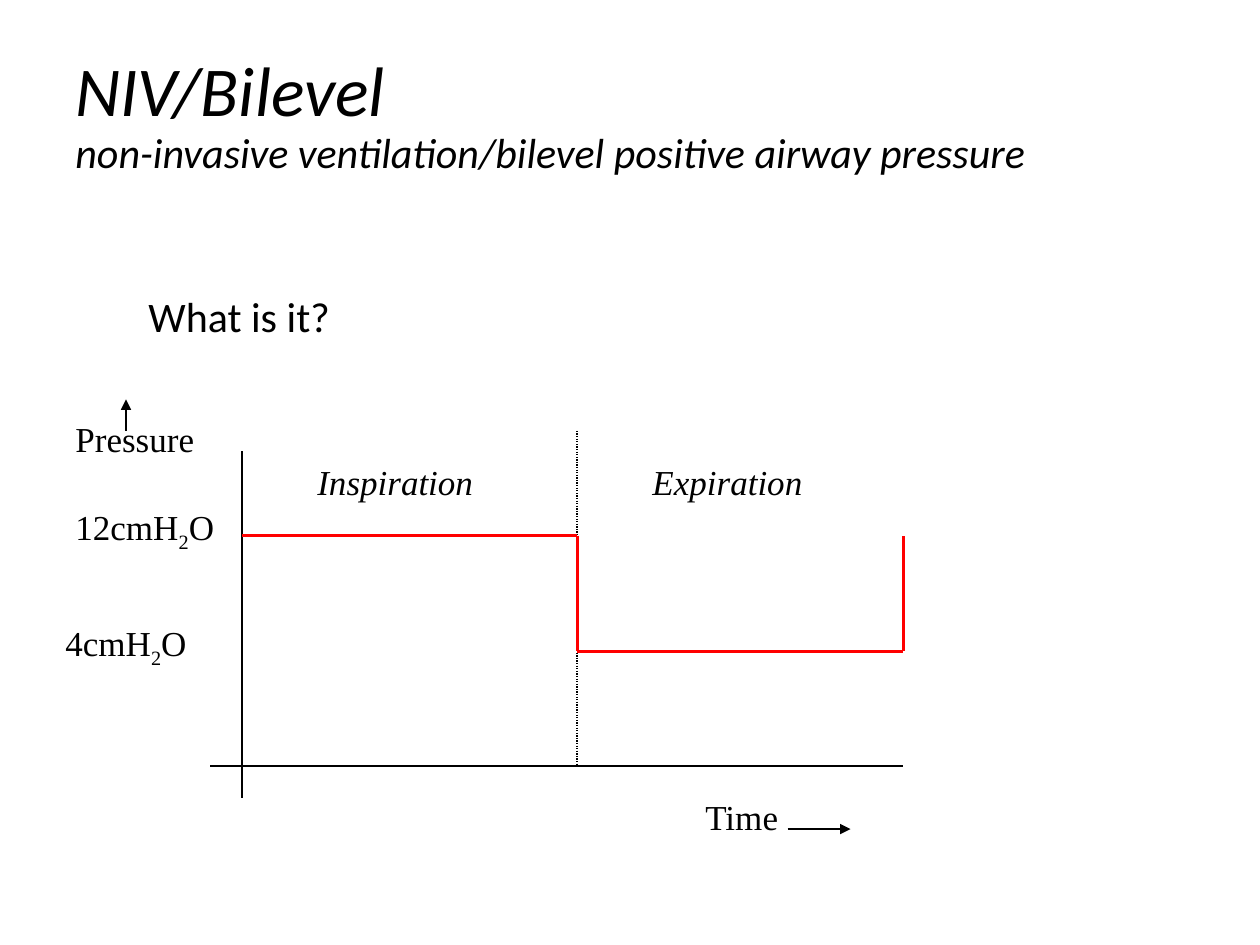
from lxml import etree
from pptx import Presentation
from pptx.dml.color import RGBColor
from pptx.enum import dml, shapes, text
from pptx.oxml import ns
from pptx.util import Inches, Pt

BLACK = RGBColor(0, 0, 0)
RED = RGBColor(255, 0, 0)
SANS, SERIF = "Calibri", "Times New Roman"

TITLE = "NIV/Bilevel"
SUBTITLE = "non-invasive ventilation/bilevel positive airway pressure"
QUESTION = "What is it?"

AXIS_X, SWITCH_X, END_X = 1.92, 4.58, 7.17
HIGH_Y, LOW_Y, BASE_Y = 4.25, 5.17, 6.08

LABELS = [
    (["Pressure"], 0.5, 3.33, 1.25, False),
    (["12cmH", "2", "O"], 0.5, 4, 1.33, False),
    (["4cmH", "2", "O"], 0.42, 4.92, 1.33, False),
    (["Inspiration"], 2.42, 3.67, 1.58, True),
    (["Expiration"], 5.08, 3.67, 1.58, True),
    (["Time"], 5.5, 6.33, 1.17, False),
]
AXES = [
    ((AXIS_X, 3.58), (AXIS_X, 6.33)),
    ((1.67, BASE_Y), (END_X, BASE_Y)),
]
ARROWS = [
    ((1, 3.42), (1, 3.17)),
    ((6.25, 6.58), (6.75, 6.58)),
]
PRESSURE_CURVE = [
    (AXIS_X, HIGH_Y), (SWITCH_X, HIGH_Y), (SWITCH_X, LOW_Y),
    (END_X, LOW_Y), (END_X, HIGH_Y),
]


def add_text(slide, pieces, left, top, width, height, size, font,
             italic=False, spacing=0.8):
    box = slide.shapes.add_textbox(*map(Inches, (left, top, width, height)))
    frame = box.text_frame
    frame.word_wrap = True
    paragraph = frame.paragraphs[0]
    paragraph.line_spacing = spacing
    paragraph.font.size = Pt(size)
    paragraph.font.name = font
    paragraph.font.italic = italic
    paragraph.font.color.rgb = BLACK
    for piece in pieces:
        run = paragraph.add_run()
        run.text = piece
        if piece == "2":
            run.font._element.set("baseline", "-25000")
    return frame


def add_line(slide, start, end, color=BLACK, width=0.75):
    line = slide.shapes.add_connector(
        shapes.MSO_CONNECTOR.STRAIGHT, *map(Inches, start + end))
    line.line.color.rgb = color
    line.line.width = Pt(width)
    etree.SubElement(line._element.spPr, ns.qn("a:effectLst"))
    return line


def add_title(slide):
    frame = add_text(slide, [TITLE], 0.5, 0.3, 9, 1.25, 40, SANS, True, 0.9)
    frame.vertical_anchor = text.MSO_ANCHOR.MIDDLE
    paragraph = frame.paragraphs[0]
    paragraph.add_line_break()
    subtitle = paragraph.add_run()
    subtitle.text = SUBTITLE
    subtitle.font.size = Pt(24)


def main():
    presentation = Presentation()
    presentation.slide_width = Inches(10)
    presentation.slide_height = Inches(7.5)
    slide = presentation.slides.add_slide(presentation.slide_layouts[6])

    add_title(slide)
    add_text(slide, [QUESTION], 1.08, 2.33, 3.92, 0.42, 24, SANS)
    for pieces, left, top, width, italic in LABELS:
        add_text(slide, pieces, left, top, width, 0.43, 20, SERIF, italic)

    for start, end in AXES:
        add_line(slide, start, end)
    for start, end in ARROWS:
        arrow = add_line(slide, start, end)
        etree.SubElement(arrow.line._get_or_add_ln(), ns.qn("a:tailEnd"),
                         type="triangle")
    divider = add_line(slide, (SWITCH_X, 3.42), (SWITCH_X, BASE_Y))
    divider.line.dash_style = dml.MSO_LINE.ROUND_DOT
    for start, end in zip(PRESSURE_CURVE, PRESSURE_CURVE[1:]):
        add_line(slide, start, end, RED, 1.75)

    presentation.save("out.pptx")


if __name__ == "__main__":
    main()
